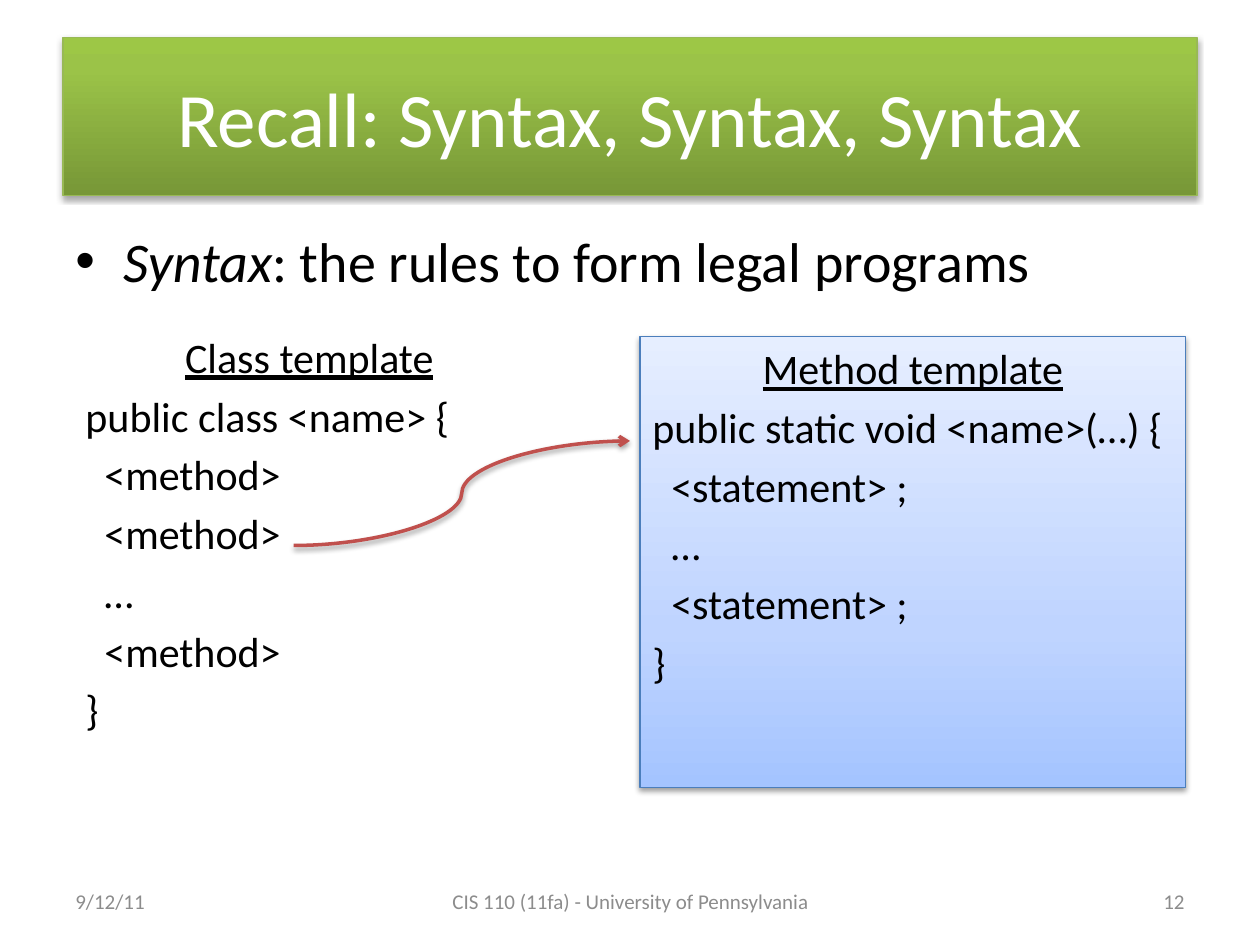
from lxml import etree
from pptx import Presentation
from pptx.dml.color import RGBColor
from pptx.enum.shapes import MSO_CONNECTOR, MSO_SHAPE
from pptx.enum.text import MSO_ANCHOR, PP_ALIGN
from pptx.oxml import parse_xml
from pptx.oxml.ns import nsdecls, qn
from pptx.util import Inches, Pt

LEFT, CENTER, RIGHT = PP_ALIGN.LEFT, PP_ALIGN.CENTER, PP_ALIGN.RIGHT
TOP, MIDDLE = MSO_ANCHOR.TOP, MSO_ANCHOR.MIDDLE
CURVE, RECTANGLE = MSO_CONNECTOR.CURVE, MSO_SHAPE.RECTANGLE

WHITE = RGBColor(0xFF, 0xFF, 0xFF)
BLACK = RGBColor(0, 0, 0)
GRAY = RGBColor(0x8C, 0x8C, 0x8C)
GREEN = RGBColor(0x98, 0xB9, 0x55)
BLUE = RGBColor(0x4B, 0x7E, 0xBC)
RED = RGBColor(0xC0, 0x50, 0x4D)
# Gradient stops run from the bottom edge upwards
GREEN_STOPS = [(0, RGBColor(0x77, 0x97, 0x37)), (80, RGBColor(0x9B, 0xC3, 0x48)),
               (100, RGBColor(0x9D, 0xC7, 0x46))]
BLUE_STOPS = [(0, RGBColor(0xA4, 0xC4, 0xFF)), (35, RGBColor(0xBF, 0xD4, 0xFF)),
              (100, RGBColor(0xE6, 0xEE, 0xFF))]

# Content: code lines are (indent level, text)
TITLE = "Recall: Syntax, Syntax, Syntax"
TERM, MEANING = "Syntax", ": the rules to form legal programs"
CLASS_TEMPLATE = ("Class template", [
    (0, "public class <name> {"), (1, "<method>"), (1, "<method>"),
    (1, "…"), (1, "<method>"), (0, "}")])
METHOD_TEMPLATE = ("Method template", [
    (0, "public static void <name>(…) {"), (1, "<statement> ;"),
    (1, "…"), (1, "<statement> ;"), (0, "}")])
FOOTERS = [  # text, left, width, alignment
    ("9/12/11", 0.5, 2.33, LEFT),
    ("CIS 110 (11fa) - University of Pennsylvania", 3.42, 3.17, CENTER),
    ("12", 7.17, 2.33, RIGHT)]

HANGING, CODE_INDENT = 0.38, 0.15


def add_run(paragraph, text, size, color=BLACK, **extra):
    run = paragraph.add_run()
    run.text = text
    style = {"name": "Calibri", "size": Pt(size), **extra}
    for attribute, value in style.items():
        setattr(run.font, attribute, value)
    run.font.color.rgb = color


def set_hanging(paragraph, extra_indent=0.0, bullet=None):
    properties = paragraph._p.get_or_add_pPr()
    properties.set("marL", str(Inches(HANGING + extra_indent)))
    properties.set("indent", str(-Inches(HANGING)))
    space = etree.SubElement(properties, qn("a:spcBef"))
    etree.SubElement(space, qn("a:spcPct"), val="20000")
    if bullet:
        etree.SubElement(properties, qn("a:buFont"), typeface="Arial")
        etree.SubElement(properties, qn("a:buChar"), char=bullet)


def set_line(shape, color, width):
    shape.line.color.rgb = color
    shape.line.width = Pt(width)


def add_shadow(shape, opacity, distance):
    shape._element.spPr.append(parse_xml(
        f'<a:effectLst {nsdecls("a")}><a:outerShdw blurRad="{Pt(3.1)}" '
        f'dist="{Pt(distance)}" dir="5400000" rotWithShape="0"><a:srgbClr val="000000">'
        f'<a:alpha val="{opacity * 1000}"/></a:srgbClr></a:outerShdw></a:effectLst>'))


def set_panel(shape, stops, line_color, opacity, distance):
    stop_xml = "".join(f'<a:gs pos="{position * 1000}"><a:srgbClr val="{color}"/></a:gs>'
                       for position, color in stops)
    shape._element.spPr.append(parse_xml(
        f'<a:gradFill {nsdecls("a")} rotWithShape="1"><a:gsLst>{stop_xml}</a:gsLst>'
        '<a:lin ang="16200000" scaled="0"/></a:gradFill>'))
    set_line(shape, line_color, 0.75)
    add_shadow(shape, opacity, distance)


def add_text_box(slide, left, top, width, height, anchor=TOP):
    box = slide.shapes.add_textbox(*map(Inches, (left, top, width, height)))
    box.text_frame.word_wrap = True
    box.text_frame.vertical_anchor = anchor
    return box


def write_template(shape, template):
    heading, code = template
    frame = shape.text_frame
    frame.word_wrap = True
    frame.vertical_anchor = TOP
    first = frame.paragraphs[0]
    first.alignment = CENTER
    set_hanging(first)
    add_run(first, heading, 24, underline=True)
    for level, text in code:
        paragraph = frame.add_paragraph()
        paragraph.alignment = LEFT
        set_hanging(paragraph, level * CODE_INDENT)
        add_run(paragraph, text, 24)


def main():
    deck = Presentation()
    deck.slide_width, deck.slide_height = Inches(10), Inches(7.5)
    slide = deck.slides.add_slide(deck.slide_layouts[5])

    # Title banner
    title = slide.shapes.title
    title.left, title.top, title.width, title.height = map(Inches, (0.5, 0.3, 9, 1.25))
    set_panel(title, GREEN_STOPS, GREEN, 35, 1.8)
    title.text_frame.vertical_anchor = MIDDLE
    heading = title.text_frame.paragraphs[0]
    heading.alignment = CENTER
    add_run(heading, TITLE, 44, WHITE)

    # Definition
    definition = add_text_box(slide, 0.5, 1.75, 9, 0.67).text_frame.paragraphs[0]
    set_hanging(definition, bullet="•")
    add_run(definition, TERM, 32, italic=True)
    add_run(definition, MEANING, 32)

    # Footer row
    for text, left, width, alignment in FOOTERS:
        footer = add_text_box(slide, left, 6.95, width, 0.4, MIDDLE).text_frame.paragraphs[0]
        footer.alignment = alignment
        add_run(footer, text, 12, GRAY)

    # Class and method templates
    write_template(add_text_box(slide, 0.58, 2.58, 3.75, 3.58), CLASS_TEMPLATE)
    method_panel = slide.shapes.add_shape(
        RECTANGLE, *map(Inches, (5.08, 2.67, 4.33, 3.58)))
    set_panel(method_panel, BLUE_STOPS, BLUE, 38, 1.6)
    write_template(method_panel, METHOD_TEMPLATE)

    # Arrow from a method line to its template
    arrow = slide.shapes.add_connector(CURVE, *map(Inches, (2.33, 4.33, 5, 3.5)))
    set_line(arrow, RED, 2)
    etree.SubElement(arrow.line._get_or_add_ln(), qn("a:tailEnd"), type="arrow")
    add_shadow(arrow, 38, 1.6)

    deck.save("out.pptx")


if __name__ == "__main__":
    main()
